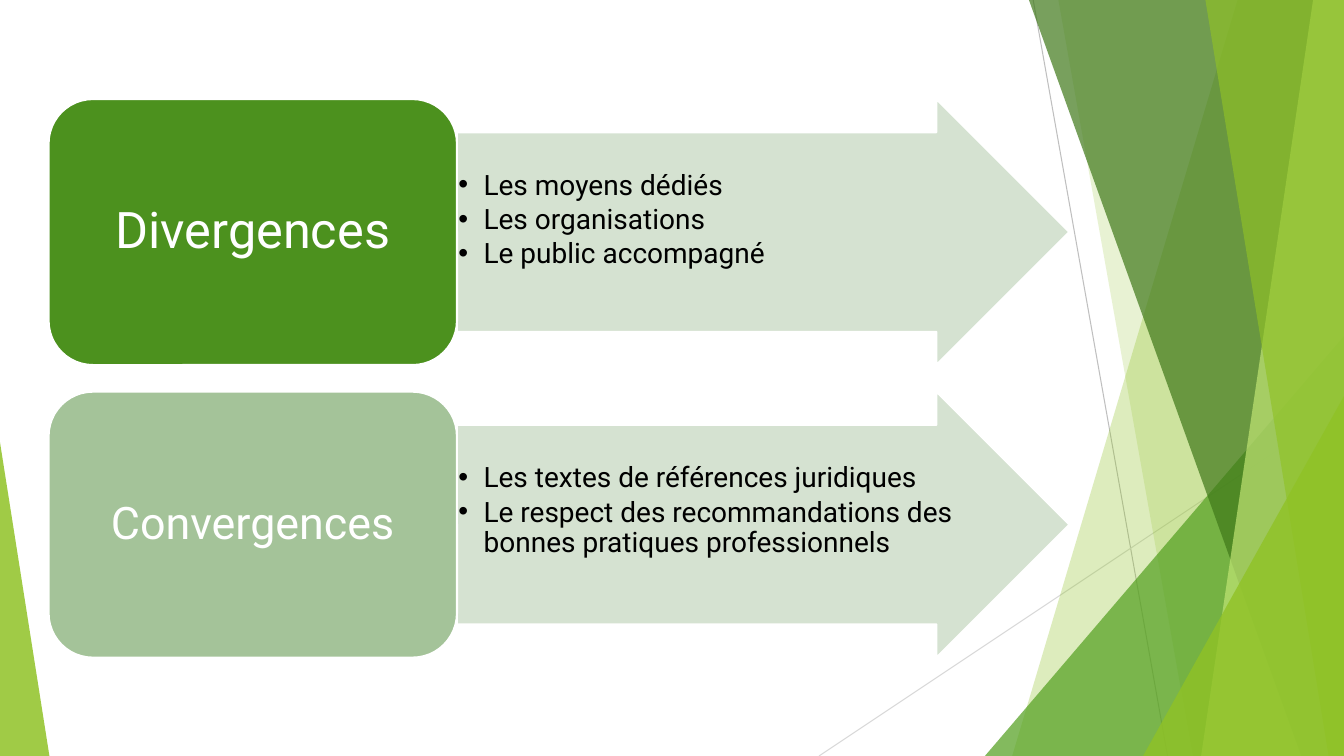
import pptx
import pptx.dml.color
import pptx.enum.shapes
import pptx.enum.text
import pptx.oxml
import pptx.oxml.ns
import pptx.util

Pt = pptx.util.Pt
SHAPE = pptx.enum.shapes.MSO_SHAPE
WIDTH, HEIGHT = 960, 540


def paint(shape, fill, opacity=100, line=None):
    """Fill a shape with a hex colour, and outline it if a line colour is given."""
    shape.shadow.inherit = False
    shape.fill.solid()
    shape.fill.fore_color.rgb = pptx.dml.color.RGBColor.from_string(fill)
    if opacity < 100:
        colour = shape.fill._xPr.find(".//" + pptx.oxml.ns.qn("a:srgbClr"))
        alpha = colour.makeelement(pptx.oxml.ns.qn("a:alpha"), {"val": str(opacity * 1000)})
        colour.append(alpha)
    if line:
        shape.line.color.rgb = pptx.dml.color.RGBColor.from_string(line)
        shape.line.width = Pt(1.5)
    else:
        shape.line.fill.background()


def write(para, text, size=20, colour="000000", align="LEFT", after=0):
    """Put one formatted run into a paragraph."""
    para.alignment = getattr(pptx.enum.text.PP_ALIGN, align)
    para.line_spacing = 0.9
    para.space_before = Pt(0)
    para.space_after = Pt(after)
    span = para.add_run()
    span.text = text
    span.font.name = "Roboto"
    span.font.size = Pt(size)
    span.font.color.rgb = pptx.dml.color.RGBColor.from_string(colour)


deck = pptx.Presentation()
deck.slide_width, deck.slide_height = Pt(WIDTH), Pt(HEIGHT)
page = deck.slides.add_slide(deck.slide_layouts.get_by_name("Two Content"))
title = page.shapes.title
title.element.getparent().remove(title.element)
bodies = list(page.placeholders)

# Thin lines behind the green facets
for x1, y1, x2, y2, colour in [
    (738, 0, 834, HEIGHT, "BFBFBF"),
    (WIDTH, 290, 585, HEIGHT, "D9D9D9"),
]:
    line = page.shapes.add_connector(
        pptx.enum.shapes.MSO_CONNECTOR.STRAIGHT, Pt(x1), Pt(y1), Pt(x2), Pt(y2))
    line.line.color.rgb = pptx.dml.color.RGBColor.from_string(colour)
    line.line.width = Pt(0.75)
    line._element.spPr.append(pptx.oxml.parse_xml(
        '<a:effectLst xmlns:a="http://schemas.openxmlformats.org/drawingml/2006/main"/>'))

# Green facets: bands reach the right edge, triangles stand on the bottom edge
facets = [
    ("band", (884, 723), "90C226", 30),
    ("band", (756, 852), "90C226", 20),
    ("triangle", (703.5, 240, 256.5, 1), "54A021", 72),
    ("band", (735, 929.5), "3F7819", 70),
    ("band", (938, 858), "C0E474", 70),
    ("band", (861, 949), "90C226", 65),
    ("triangle", (816.5, 283, 143.5, 1), "90C226", 80),
    ("triangle", (0, 316, 35.3, 0), "90C226", 85),
]
for kind, place, colour, opacity in facets:
    if kind == "band":
        top_x, bottom_x = place
        outline = page.shapes.build_freeform(Pt(top_x), 0)
        outline.add_line_segments(
            [(Pt(WIDTH), 0), (Pt(WIDTH), Pt(HEIGHT)), (Pt(bottom_x), Pt(HEIGHT))])
        facet = outline.convert_to_shape()
    else:
        left, top, width, apex = place
        facet = page.shapes.add_shape(
            SHAPE.ISOSCELES_TRIANGLE, Pt(left), Pt(top), Pt(width), Pt(HEIGHT - top))
        facet.adjustments[0] = apex
    paint(facet, colour, opacity)

# Two rows: a heading card and an arrow with its list
CARD_LEFT, CARD_WIDTH, ROW_HEIGHT = 34.7, 291.7, 190
ARROW_LEFT = CARD_LEFT + CARD_WIDTH
rows = [
    ("Divergences", 36, "4C911E",
     ["Les moyens dédiés", "Les organisations", "Le public accompagné"]),
    ("Convergences", 32, "A4C399",
     ["Les textes de références juridiques",
      "Le respect des recommandations des bonnes pratiques professionnels"]),
]
for index, (heading, size, colour, items) in enumerate(rows):
    top = 70.75 + index * 209
    arrow = page.shapes.add_shape(
        SHAPE.RIGHT_ARROW, Pt(ARROW_LEFT), Pt(top), Pt(437.5), Pt(ROW_HEIGHT))
    arrow.adjustments[0], arrow.adjustments[1] = 0.75, 0.5
    paint(arrow, "D1DFCD", 90, line="FFFFFF")

    card = page.shapes.add_shape(
        SHAPE.ROUNDED_RECTANGLE, Pt(CARD_LEFT), Pt(top), Pt(CARD_WIDTH), Pt(ROW_HEIGHT))
    paint(card, colour, line="FFFFFF")
    card.text_frame.word_wrap = True
    card.text_frame.vertical_anchor = pptx.enum.text.MSO_ANCHOR.MIDDLE
    write(card.text_frame.paragraphs[0], heading, size=size, colour="FFFFFF", align="CENTER")

    # The list goes in front of its arrow
    body = bodies[index]
    page.shapes._spTree.append(body.element)
    body.left, body.top = Pt(ARROW_LEFT), Pt(top + ROW_HEIGHT / 8)
    body.width, body.height = Pt(366.5), Pt(ROW_HEIGHT * 0.75)
    frame = body.text_frame
    frame.auto_size = pptx.enum.text.MSO_AUTO_SIZE.NONE
    frame.word_wrap = True
    frame.vertical_anchor = pptx.enum.text.MSO_ANCHOR.TOP
    frame.margin_left = frame.margin_right = frame.margin_bottom = Pt(1)
    frame.margin_top = Pt(27.5)
    for number, item in enumerate(items):
        para = frame.add_paragraph() if number else frame.paragraphs[0]
        write(para, item, after=3)
        properties = para._p.get_or_add_pPr()
        properties.set("marL", str(Pt(18)))
        properties.set("indent", str(-Pt(18)))

deck.save("out.pptx")
